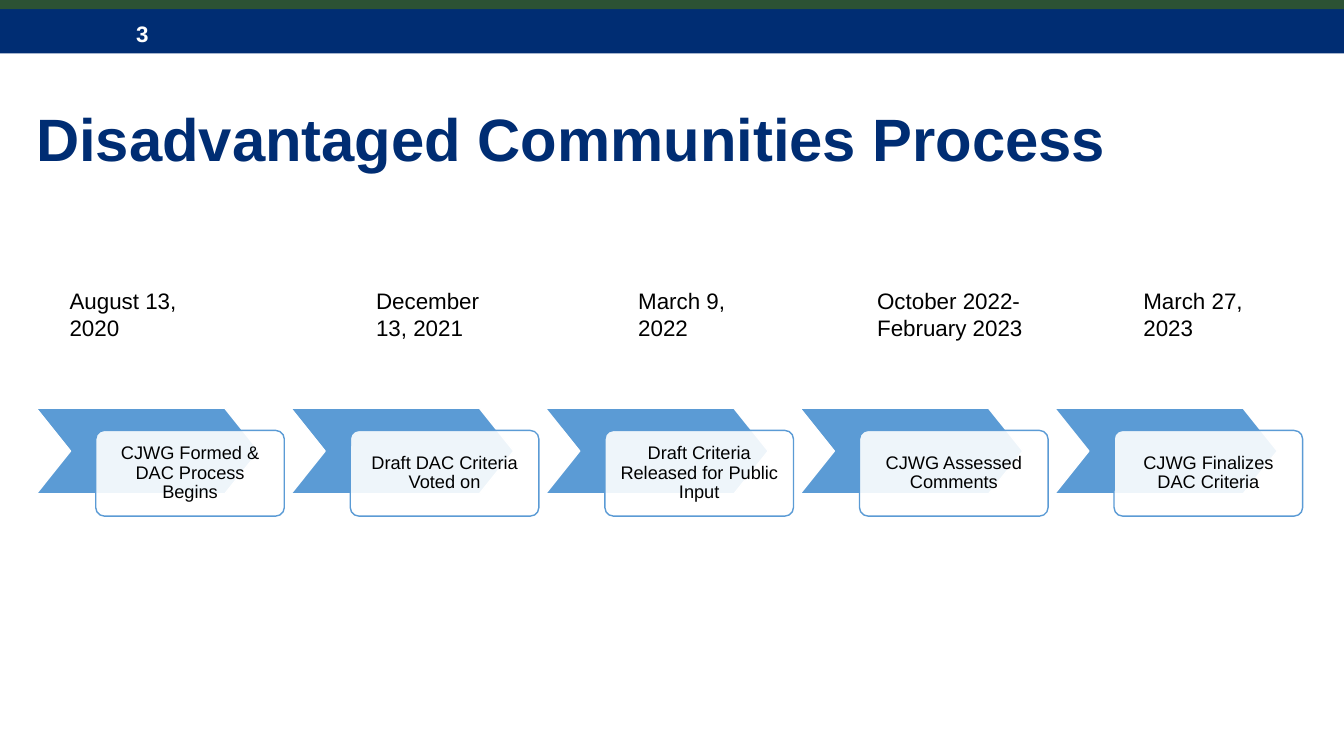
from lxml import etree
from pptx import Presentation
from pptx.dml.color import RGBColor
from pptx.enum.shapes import MSO_SHAPE
from pptx.enum.text import MSO_ANCHOR, PP_ALIGN
from pptx.oxml.ns import qn
from pptx.util import Inches, Pt

RECT, CHEVRON, ROUNDED = MSO_SHAPE.RECTANGLE, MSO_SHAPE.CHEVRON, MSO_SHAPE.ROUNDED_RECTANGLE
TOP, MIDDLE = MSO_ANCHOR.TOP, MSO_ANCHOR.MIDDLE
LEFT, CENTER = PP_ALIGN.LEFT, PP_ALIGN.CENTER

FONT = "Arial"
NAVY, GREEN, BLUE = "002D73", "2C5234", "5B9BD5"
WHITE, BLACK = "FFFFFF", "000000"

SLIDE_W, SLIDE_H = 13.33, 7.5
STEPS = [
    "CJWG Formed & DAC Process Begins",
    "Draft DAC Criteria Voted on",
    "Draft Criteria Released for Public Input",
    "CJWG Assessed Comments",
    "CJWG Finalizes DAC Criteria",
]
# Date text, left edge and width; no-break spaces keep the parts of a date together
DATES = [
    ("August 13, 2020", 0.56, 1.51),
    ("December 13, 2021", 3.6, 1.51),
    ("March 9, 2022", 6.2, 1.51),
    ("October 2022- February 2023", 8.57, 1.8),
    ("March 27, 2023", 11.21, 1.51),
]


def color(value):
    return RGBColor.from_string(value)


def add_shape(s, kind, x, y, w, h, fill, line=None, adj=None, alpha=None):
    sp = s.shapes.add_shape(kind, Inches(x), Inches(y), Inches(w), Inches(h))
    sp.shadow.inherit = False
    sp.fill.solid()
    sp.fill.fore_color.rgb = color(fill)
    if line:
        sp.line.color.rgb = color(line)
        sp.line.width = Pt(1)
    else:
        sp.line.fill.background()
    if adj is not None:
        sp.adjustments[0] = adj
    if alpha is not None:
        clr = sp.fill._xPr.find(qn("a:solidFill"))[0]
        etree.SubElement(clr, qn("a:alpha")).set("val", str(alpha * 1000))
    return sp


def add_box(s, x, y, w, h):
    return s.shapes.add_textbox(Inches(x), Inches(y), Inches(w), Inches(h))


def set_text(sp, text, size, fill=BLACK, bold=False, align=LEFT, anchor=TOP,
             insets=(0, 0, 0, 0), spacing=1.0):
    """Write one paragraph; insets run left, top, right, bottom."""
    tf = sp.text_frame
    tf.word_wrap = True
    tf.vertical_anchor = anchor
    tf.margin_left, tf.margin_top, tf.margin_right, tf.margin_bottom = map(Inches, insets)
    p = tf.paragraphs[0]
    p.alignment = align
    p.line_spacing = spacing
    r = p.add_run()
    r.text = text
    r.font.name = FONT
    r.font.size = Pt(size)
    r.font.bold = bold
    r.font.color.rgb = color(fill)


def add_banner(s, x, y, w, number):
    strip_h, bar_h = 0.09, 0.44
    bar = add_shape(s, RECT, x, y + strip_h, w, bar_h, NAVY)
    set_text(bar, number, 16, WHITE, bold=True, anchor=MIDDLE,
             insets=(1.35, 0.12, 0.4, 0.08))
    add_shape(s, RECT, x, y, w, strip_h, GREEN)


def add_title(s, x, y, w, h, text):
    set_text(add_box(s, x, y, w, h), text, 42.7, NAVY, bold=True, anchor=MIDDLE, spacing=0.9)


def add_step(s, x, y, text):
    """One chevron with its label card overlapping the lower right."""
    add_shape(s, CHEVRON, x, y, 2.21, 0.85, BLUE, line=WHITE, adj=0.4)
    card = add_shape(s, ROUNDED, x + 0.59, y + 0.22, 1.87, 0.85, WHITE,
                     line=BLUE, adj=0.1, alpha=90)
    set_text(card, text, 13, align=CENTER, anchor=MIDDLE,
             insets=(0.12, 0.12, 0.12, 0.12), spacing=0.9)


def add_process(s, x, y, steps):
    pitch = 2.525
    for i, text in enumerate(steps):
        add_step(s, x + i * pitch, y, text)


def add_dates(s, y, dates):
    for text, x, w in dates:
        set_text(add_box(s, x, y, w, 0.67), text, 16, insets=(0.13, 0.07, 0.13, 0.07))


def main():
    prs = Presentation()
    prs.slide_width, prs.slide_height = Inches(SLIDE_W), Inches(SLIDE_H)
    s = prs.slides.add_slide(prs.slide_layouts[6])
    add_banner(s, 0, 0, SLIDE_W, "3")
    add_title(s, 0.36, 0.74, 12.56, 1.34, "Disadvantaged Communities Process")
    add_process(s, 0.36, 4.05, STEPS)
    add_dates(s, 2.78, DATES)
    prs.save("out.pptx")


if __name__ == "__main__":
    main()
